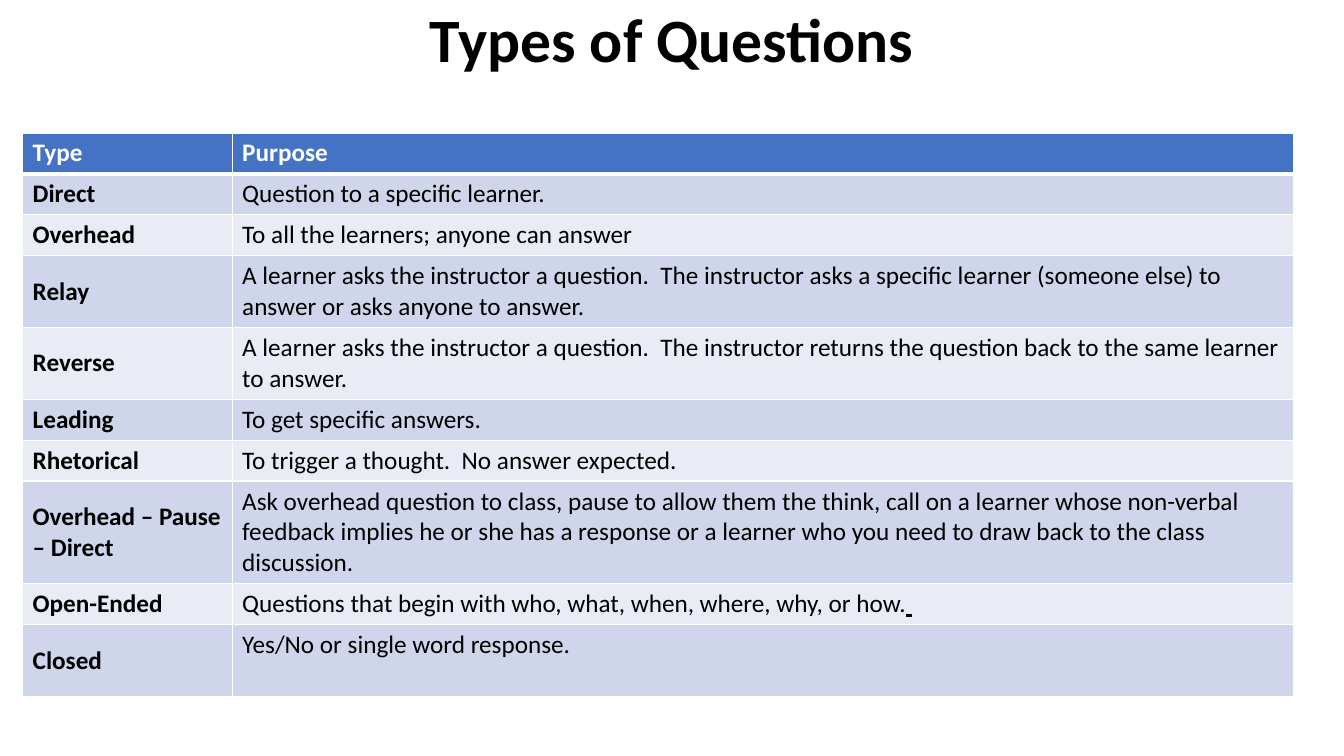
"""Build a slide with a table of question types and their purposes."""
from dataclasses import dataclass

from lxml import etree
from pptx import Presentation
from pptx.dml.color import RGBColor
from pptx.enum.text import MSO_ANCHOR, PP_ALIGN
from pptx.oxml.ns import qn
from pptx.slide import Slide
from pptx.table import _Cell
from pptx.text.text import _Paragraph
from pptx.util import Cm, Pt

MIDDLE, TOP = MSO_ANCHOR.MIDDLE, MSO_ANCHOR.TOP
CENTER = PP_ALIGN.CENTER
COLORS = {"ink": "000000", "paper": "FFFFFF", "head": "4472C4",
          "odd": "CFD5EA", "even": "E9EBF5"}
FORMATS = {
    "title": {"name": "Calibri", "size": Pt(44), "bold": True},
    "label": {"name": "Calibri", "size": Pt(18), "bold": True},
    "body": {"name": "Calibri", "size": Pt(18), "bold": False},
    "tail": {"name": "Calibri", "size": Pt(18), "bold": False, "underline": True},
}
WIDTHS = (5.28, 26.75)
LINE, PAD = 0.78, 0.25


@dataclass
class Kind:
    name: str
    purpose: str
    lines: int = 1
    tail: str = ""


KINDS = [
    Kind("Type", "Purpose"),
    Kind("Direct", "Question to a specific learner."),
    Kind("Overhead", "To all the learners; anyone can answer"),
    Kind("Relay", "A learner asks the instructor a question.  The instructor asks "
         "a specific learner (someone else) to answer or asks anyone to answer.", 2),
    Kind("Reverse", "A learner asks the instructor a question.  The instructor returns "
         "the question back to the same learner to answer.", 2),
    Kind("Leading", "To get specific answers."),
    Kind("Rhetorical", "To trigger a thought.  No answer expected."),
    Kind("Overhead – Pause – Direct", "Ask overhead question to class, pause to allow "
         "them the think, call on a learner whose non-verbal feedback implies he or she "
         "has a response or a learner who you need to draw back to the class discussion.", 3),
    Kind("Open-Ended", "Questions that begin with who, what, when, where, why, or how.",
         tail=" "),
    Kind("Closed", "Yes/No or single word response.", 2),
]


def write(para: _Paragraph, text: str, style: str, color: str) -> None:
    run = para.add_run()
    run.text = text
    for key, value in FORMATS[style].items():
        setattr(run.font, key, value)
    run.font.color.rgb = RGBColor.from_string(COLORS[color])


def edge(cell: _Cell, row: int) -> None:
    props = cell._tc.get_or_add_tcPr()
    thick = {(0, "B"), (1, "T")}
    for side in "LRTB":
        width = Pt(3 if (row, side) in thick else 1)
        line = etree.SubElement(props, qn(f"a:ln{side}"), w=str(width))
        fill = etree.SubElement(line, qn("a:solidFill"))
        etree.SubElement(fill, qn("a:srgbClr"), val=COLORS["paper"])


def paint(cell: _Cell, row: int) -> None:
    edge(cell, row)
    shade = "head" if row == 0 else "odd" if row % 2 else "even"
    cell.fill.solid()
    cell.fill.fore_color.rgb = RGBColor.from_string(COLORS[shade])


def draw_title(slide: Slide) -> None:
    box = slide.shapes.add_textbox(Cm(2.33), Cm(0.05), Cm(29.21), Cm(2.03))
    frame = box.text_frame
    frame.word_wrap = True
    frame.vertical_anchor = MIDDLE
    para = frame.paragraphs[0]
    para.alignment = CENTER
    para.line_spacing = 0.9
    write(para, "Types of Questions", "title", "ink")


def draw_table(slide: Slide, kinds: list[Kind]) -> None:
    highs = [PAD + LINE * kind.lines for kind in kinds]
    table = slide.shapes.add_table(len(kinds), len(WIDTHS), Cm(0.57), Cm(3.35),
                                   Cm(sum(WIDTHS)), Cm(sum(highs))).table
    table.horz_banding = False
    for col, width in zip(table.columns, WIDTHS):
        col.width = Cm(width)
    for row, (kind, high) in enumerate(zip(kinds, highs)):
        table.rows[row].height = Cm(high)
        label, body = table.cell(row, 0), table.cell(row, 1)
        color = "ink" if row else "paper"
        label.vertical_anchor = MIDDLE if row else TOP
        write(label.text_frame.paragraphs[0], kind.name, "label", color)
        para = body.text_frame.paragraphs[0]
        write(para, kind.purpose, "body" if row else "label", color)
        if kind.tail:
            write(para, kind.tail, "tail", color)
        for cell in (label, body):
            paint(cell, row)


def main() -> None:
    deck = Presentation()
    deck.slide_width, deck.slide_height = Cm(33.87), Cm(19.05)
    slide = deck.slides.add_slide(deck.slide_layouts[6])
    draw_title(slide)
    draw_table(slide, KINDS)
    deck.save("out.pptx")


if __name__ == "__main__":
    main()
